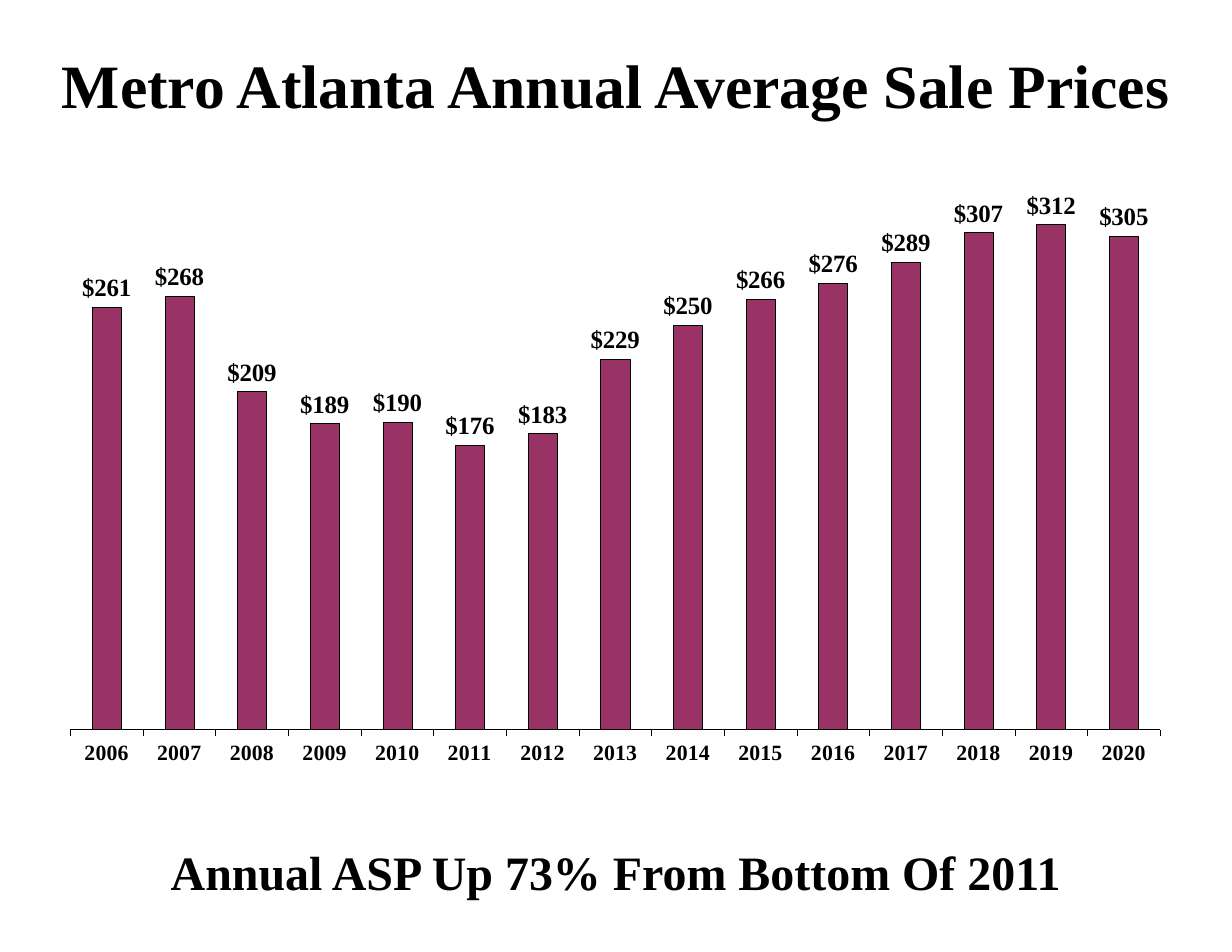
import pptx
import pptx.chart.data
import pptx.dml.color
import pptx.enum.chart
import pptx.enum.text
import pptx.oxml
import pptx.oxml.ns
import pptx.util

Pt = pptx.util.Pt
FONT = "Times New Roman"
PRICES = [261, 268, 209, 189, 190, 176, 183, 229, 250, 266, 276, 289, 307, 312, 305]
FIRST_YEAR = 2006


def rgb(value):
    return pptx.dml.color.RGBColor.from_string(value)


def style_font(font, size):
    font.name = FONT
    font.size = Pt(size)
    font.bold = True
    font.color.rgb = rgb("000000")


def style_line(line, width):
    line.color.rgb = rgb("000000")
    line.width = Pt(width)


def write_heading(s, text, size):
    tf = s.text_frame
    tf.word_wrap = True
    tf.auto_size = pptx.enum.text.MSO_AUTO_SIZE.NONE
    tf.vertical_anchor = pptx.enum.text.MSO_ANCHOR.MIDDLE
    tf.margin_left = tf.margin_right = tf.margin_top = tf.margin_bottom = 0
    p = tf.paragraphs[0]
    p.alignment = pptx.enum.text.PP_ALIGN.CENTER
    r = p.add_run()
    r.text = text
    style_font(r.font, size)


def add_title(sp, text):
    s = sp.title
    s.left, s.top, s.width, s.height = Pt(0), Pt(32), Pt(792), Pt(44)
    write_heading(s, text, 39.6)


def add_caption(sp, text):
    s = sp.add_textbox(Pt(20), Pt(524), Pt(752), Pt(72))
    write_heading(s, text, 30.8)


def place_plot(chart, x, y, w, h):
    area = chart.plots[0]._element.getparent()
    for old in area.findall(pptx.oxml.ns.qn("c:layout")):
        area.remove(old)
    sizes = "".join(f'<c:{k} val="{v}"/>' for k, v in zip("xywh", (x, y, w, h)))
    area.insert(0, pptx.oxml.parse_xml(
        f'<c:layout {pptx.oxml.ns.nsdecls("c")}><c:manualLayout>'
        '<c:layoutTarget val="inner"/><c:xMode val="edge"/><c:yMode val="edge"/>'
        f'{sizes}</c:manualLayout></c:layout>'))


def style_axes(chart):
    years = chart.category_axis
    years.major_tick_mark = pptx.enum.chart.XL_TICK_MARK.OUTSIDE
    years.tick_label_position = pptx.enum.chart.XL_TICK_LABEL_POSITION.LOW
    years.has_major_gridlines = False
    style_font(years.tick_labels.font, 14)
    style_line(years.format.line, 0.25)
    prices = chart.value_axis
    prices.minimum_scale = 0
    prices.maximum_scale = 350
    prices.has_major_gridlines = False
    prices.visible = False


def style_bars(plot):
    plot.gap_width = 150
    plot.vary_by_categories = False
    bars = plot.series[0]
    bars.format.fill.solid()
    bars.format.fill.fore_color.rgb = rgb("993366")
    style_line(bars.format.line, 0.25)
    labels = bars.data_labels
    labels.show_value = True
    labels.number_format = "\\$#,##0"
    labels.number_format_is_linked = False
    labels.position = pptx.enum.chart.XL_LABEL_POSITION.OUTSIDE_END
    style_font(labels.font, 16)


def add_price_chart(sp):
    data = pptx.chart.data.CategoryChartData()
    data.categories = [str(FIRST_YEAR + i) for i in range(len(PRICES))]
    data.add_series("Series 1", PRICES)
    chart = sp.add_chart(
        pptx.enum.chart.XL_CHART_TYPE.COLUMN_CLUSTERED,
        Pt(39.6), Pt(64.8), Pt(706.3), Pt(460), data).chart
    chart.has_title = False
    chart.has_legend = False
    style_font(chart.font, 16)
    style_axes(chart)
    style_bars(chart.plots[0])
    place_plot(chart, 0.008, 0.087, 0.992, 0.792)


def main():
    prs = pptx.Presentation()
    prs.slide_width, prs.slide_height = Pt(792), Pt(612)
    sp = prs.slides.add_slide(prs.slide_layouts[5]).shapes
    add_caption(sp, "Annual ASP Up 73% From Bottom Of 2011")
    add_price_chart(sp)
    add_title(sp, "Metro Atlanta Annual Average Sale Prices")
    prs.save("out.pptx")


if __name__ == "__main__":
    main()
